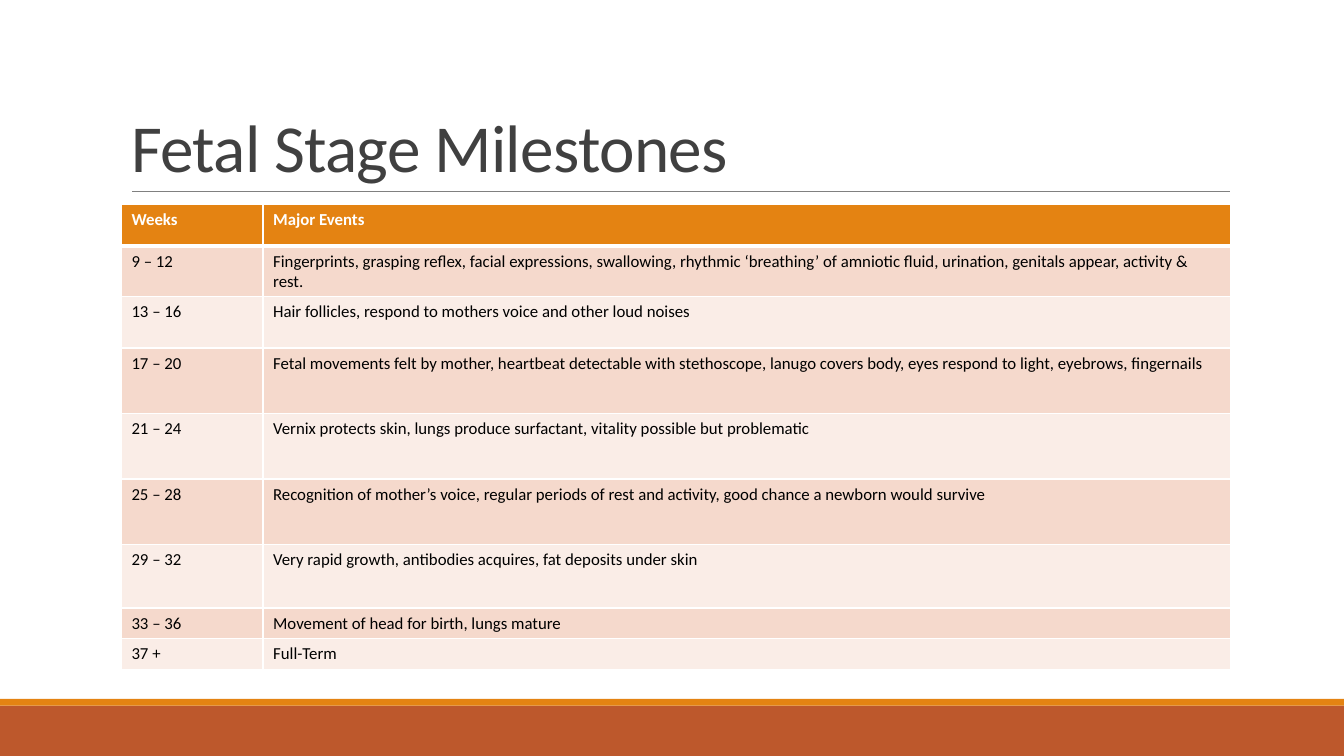
from dataclasses import dataclass

from lxml.etree import SubElement
from pptx import Presentation
from pptx.dml.color import RGBColor
from pptx.enum.shapes import MSO_CONNECTOR, MSO_SHAPE
from pptx.enum.text import MSO_ANCHOR
from pptx.oxml.ns import qn
from pptx.util import Cm, Pt


@dataclass(frozen=True)
class Theme:
    font: str = "Calibri"
    title_size: int = 48
    table_size: int = 12
    title: str = "404040"
    text: str = "000000"
    white: str = "FFFFFF"
    rule: str = "808080"
    accent: str = "E48312"
    footer: str = "BD582C"
    bands: tuple = ("F5D9CC", "FAEDE7")


THEME = Theme()
SLIDE_W, SLIDE_H = 33.87, 19.05
COL_WIDTHS = (3.57, 24.37)
ROW_HEIGHTS = (1.04, 1.27, 1.3, 1.65, 1.65, 1.65, 1.6, 0.77, 0.77)
MILESTONES = (
    ("Weeks", "Major Events"),
    ("9 – 12", "Fingerprints, grasping reflex, facial expressions, swallowing, "
               "rhythmic ‘breathing’ of amniotic fluid, urination, genitals appear, activity & rest."),
    ("13 – 16", "Hair follicles, respond to mothers voice and other loud noises"),
    ("17 – 20", "Fetal movements felt by mother, heartbeat detectable with stethoscope, "
                "lanugo covers body, eyes respond to light, eyebrows, fingernails"),
    ("21 – 24", "Vernix protects skin, lungs produce surfactant, vitality possible but problematic"),
    ("25 – 28", "Recognition of mother’s voice, regular periods of rest and activity, "
                "good chance a newborn would survive"),
    ("29 – 32", "Very rapid growth, antibodies acquires, fat deposits under skin"),
    ("33 – 36", "Movement of head for birth, lungs mature"),
    ("37 +", "Full-Term"),
)


def rgb(color):
    return RGBColor.from_string(color)


def style_font(font, size, color, bold=False):
    font.name = THEME.font
    font.size = Pt(size)
    font.bold = bold
    font.color.rgb = rgb(color)


def add_bar(s, x, y, w, h, color):
    sp = s.shapes.add_shape(MSO_SHAPE.RECTANGLE, Cm(x), Cm(y), Cm(w), Cm(h))
    sp.shadow.inherit = False
    sp.fill.solid()
    sp.fill.fore_color.rgb = rgb(color)
    sp.line.fill.background()


def add_footer(s, x, y, w, h):
    stripe = 0.17
    add_bar(s, x, y + stripe, w, h - stripe, THEME.footer)
    add_bar(s, x, y, w, stripe, THEME.accent)


def add_title(s, x, y, w, h, text):
    indent = 0.27
    line = s.shapes.add_connector(
        MSO_CONNECTOR.STRAIGHT, Cm(x + indent), Cm(y + h), Cm(x + w), Cm(y + h))
    line.line.color.rgb = rgb(THEME.rule)
    line.line.width = Pt(0.5)
    SubElement(line._element.spPr, qn("a:effectLst"))

    tf = s.shapes.add_textbox(Cm(x), Cm(y), Cm(w), Cm(h)).text_frame
    tf.word_wrap = True
    tf.vertical_anchor = MSO_ANCHOR.BOTTOM
    p = tf.paragraphs[0]
    p.text = text
    p.line_spacing = 0.85
    r = p.runs[0]
    style_font(r.font, THEME.title_size, THEME.title)
    r.font._element.set("spc", "-50")


def add_borders(cell, widths):
    tcPr = cell._tc.get_or_add_tcPr()
    for side, width in widths.items():
        ln = SubElement(tcPr, qn(f"a:ln{side}"), w=str(Pt(width)))
        fill = SubElement(ln, qn("a:solidFill"))
        SubElement(fill, qn("a:srgbClr"), val=THEME.white)


def add_milestones(s, x, y, w, h):
    table = s.shapes.add_table(
        len(MILESTONES), len(COL_WIDTHS), Cm(x), Cm(y), Cm(w), Cm(h)).table
    for col, width in zip(table.columns, COL_WIDTHS):
        col.width = Cm(width)
    for i, (row, height, texts) in enumerate(zip(table.rows, ROW_HEIGHTS, MILESTONES)):
        row.height = Cm(height)
        header = i == 0
        fill = THEME.accent if header else THEME.bands[(i - 1) % 2]
        color = THEME.white if header else THEME.text
        widths = {"L": 1, "R": 1, "T": 3 if i == 1 else 1, "B": 3 if header else 1}
        for cell, text in zip(row.cells, texts):
            add_borders(cell, widths)
            cell.fill.solid()
            cell.fill.fore_color.rgb = rgb(fill)
            cell.text_frame.text = text
            r = cell.text_frame.paragraphs[0].runs[0]
            style_font(r.font, THEME.table_size, color, header)


def main():
    prs = Presentation()
    prs.slide_width, prs.slide_height = Cm(SLIDE_W), Cm(SLIDE_H)
    s = prs.slides.add_slide(prs.slide_layouts[6])
    left, width = 3.06, sum(COL_WIDTHS)
    footer_h = 1.44
    add_footer(s, 0, SLIDE_H - footer_h, SLIDE_W, footer_h)
    add_title(s, left, 0.79, width, 4.03, "Fetal Stage Milestones")
    add_milestones(s, left, 5.16, width, sum(ROW_HEIGHTS))
    prs.save("out.pptx")


if __name__ == "__main__":
    main()
